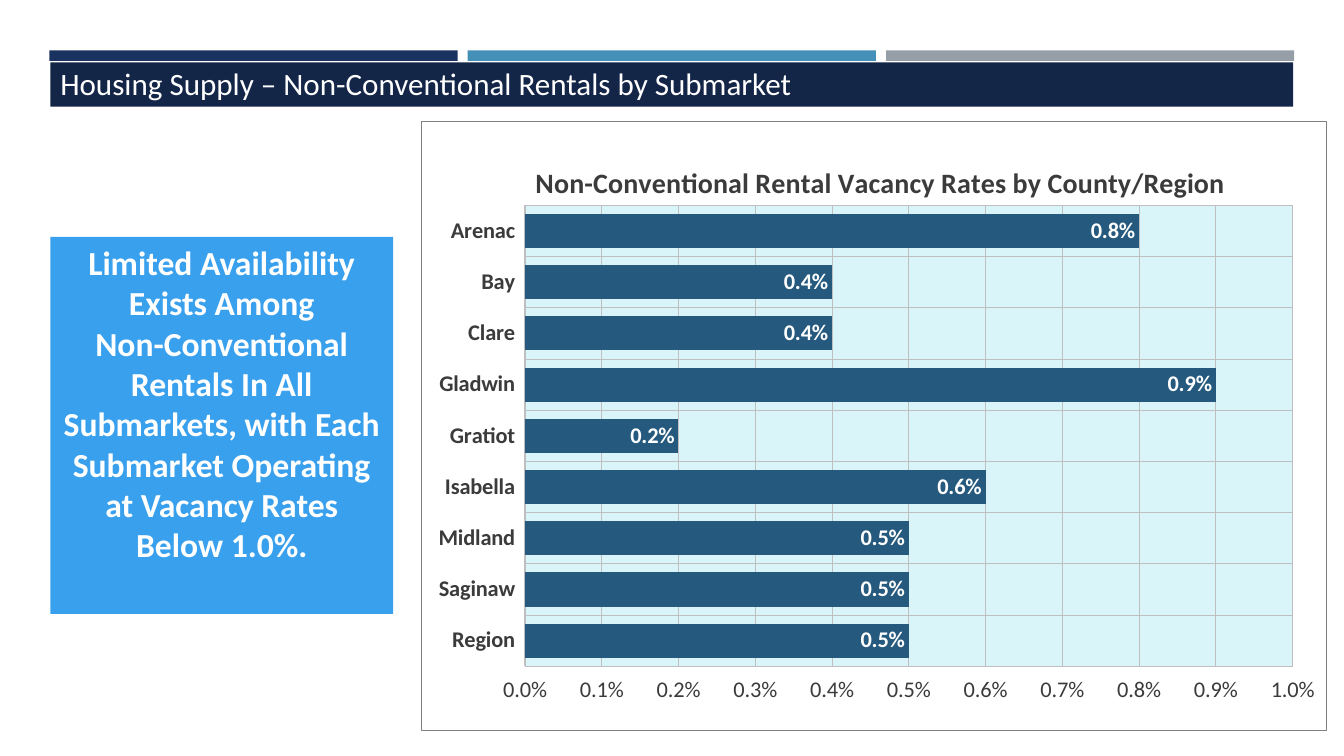
from lxml.etree import fromstring
from pptx import Presentation
from pptx.chart.data import CategoryChartData
from pptx.dml.color import RGBColor
from pptx.enum.chart import XL_CHART_TYPE, XL_LABEL_POSITION, XL_TICK_LABEL_POSITION, XL_TICK_MARK
from pptx.enum.shapes import MSO_SHAPE
from pptx.enum.text import MSO_ANCHOR, PP_ALIGN
from pptx.oxml.ns import nsdecls
from pptx.util import Pt

# Content
HEADING = "Housing Supply – Non-Conventional Rentals by Submarket"
TAKEAWAY = [
    "Limited Availability Exists Among",
    "Non-Conventional Rentals In All Submarkets, with Each Submarket "
    "Operating at Vacancy Rates Below 1.0%.",
]
CHART_TITLE = "Non-Conventional Rental Vacancy Rates by County/Region"
VACANCY = {
    "Region": 0.005, "Saginaw": 0.005, "Midland": 0.005,
    "Isabella": 0.006, "Gratiot": 0.002, "Gladwin": 0.009,
    "Clare": 0.004, "Bay": 0.004, "Arenac": 0.008,
}
STRIPES = ["1A3260", "4590B8", "969FA7"]

# Formats
INK, WHITE, GRID = "3B3B3B", "FFFFFF", "BFBFBF"
HEADING_FONT = {"name": "Calibri", "size": Pt(22.2), "bold": False, "color": WHITE}
TAKEAWAY_FONT = {"name": "Calibri", "size": Pt(24), "bold": True, "color": WHITE}
TITLE_FONT = {"name": "Calibri", "size": Pt(20), "bold": True, "color": INK}
AXIS_FONT = {"name": "Calibri", "size": Pt(16), "bold": False, "color": INK}
CATEGORY_FONT = {**AXIS_FONT, "bold": True}
LABEL_FONT = {**CATEGORY_FONT, "color": WHITE}
AXIS_FORMAT = {"has_major_gridlines": True, "major_tick_mark": XL_TICK_MARK.OUTSIDE,
               "minor_tick_mark": XL_TICK_MARK.NONE}
RATE_SCALE = {"minimum_scale": 0, "maximum_scale": 0.01, "major_unit": 0.001}
LABEL_FORMAT = {"show_value": True, "number_format": "0.0%",
                "number_format_is_linked": False,
                "position": XL_LABEL_POSITION.INSIDE_END}


def color(hex_code):
    return RGBColor.from_string(hex_code)


def apply(target, formats):
    for name, value in formats.items():
        if name == "color":
            target.color.rgb = color(value)
        else:
            setattr(target, name, value)


def panel(left, top, width, height, fill):
    rect = slide.shapes.add_shape(MSO_SHAPE.RECTANGLE, Pt(left), Pt(top), Pt(width), Pt(height))
    rect.shadow.inherit = False
    rect.fill.solid()
    rect.fill.fore_color.rgb = color(fill)
    rect.line.fill.background()
    return rect


def write(rect, lines, font, align, anchor, spacing):
    frame = rect.text_frame
    apply(frame, {"word_wrap": True, "vertical_anchor": anchor})
    for index, line in enumerate(lines):
        paragraph = frame.add_paragraph() if index else frame.paragraphs[0]
        apply(paragraph, {"text": line, "alignment": align, "line_spacing": spacing})
        apply(paragraph.font, font)


def layout(x, y, size=""):
    return fromstring(
        f'<c:layout {nsdecls("c")}><c:manualLayout>{size and "<c:layoutTarget val=" + chr(34) + "inner" + chr(34) + "/>"}'
        f'<c:xMode val="edge"/><c:yMode val="edge"/><c:x val="{x}"/><c:y val="{y}"/>{size}'
        '</c:manualLayout></c:layout>')


def area_format(fill, line):
    return fromstring(
        f'<c:spPr {nsdecls("c", "a")}><a:solidFill><a:srgbClr val="{fill}"/></a:solidFill>'
        f'<a:ln w="9525">{line}</a:ln></c:spPr>')


def place(parent, new_layout, index):
    for old in parent.findall(new_layout.tag):
        parent.remove(old)
    parent.insert(index, new_layout)


deck = Presentation()
apply(deck, {"slide_width": Pt(960), "slide_height": Pt(540)})
slide = deck.slides.add_slide(deck.slide_layouts[6])

# Stripes, heading and takeaway
for index, fill in enumerate(STRIPES):
    panel(35.3 + index * 298.8, 36, 291.6, 7.5, fill)
write(panel(36, 44.6, 887.8, 31.7, "142648"), [HEADING], HEADING_FONT,
      PP_ALIGN.LEFT, MSO_ANCHOR.BOTTOM, 0.9)
write(panel(36, 169.2, 244.8, 269.3, "39A0ED"), TAKEAWAY, TAKEAWAY_FONT,
      PP_ALIGN.CENTER, MSO_ANCHOR.TOP, 1.0)

# Vacancy chart
vacancy_data = CategoryChartData(number_format="0.0%")
vacancy_data.categories = list(VACANCY)
vacancy_data.add_series("Series 1", list(VACANCY.values()))
chart = slide.shapes.add_chart(XL_CHART_TYPE.BAR_CLUSTERED, Pt(301), Pt(86.4),
                               Pt(646.6), Pt(435.6), vacancy_data).chart
apply(chart, {"has_legend": False, "has_title": True})
apply(chart.font, AXIS_FONT)
title = chart.chart_title.text_frame
title.text = CHART_TITLE
apply(title.paragraphs[0].runs[0].font, TITLE_FONT)

# Bars and labels
bars = chart.plots[0]
apply(bars, {"gap_width": 50, "vary_by_categories": False, "has_data_labels": True})
rates = bars.series[0]
rates.format.fill.solid()
rates.format.fill.fore_color.rgb = color("25597D")
apply(bars.data_labels, LABEL_FORMAT)
apply(bars.data_labels.font, LABEL_FONT)

# Axes
for axis, font in ((chart.category_axis, CATEGORY_FONT), (chart.value_axis, AXIS_FONT)):
    apply(axis, AXIS_FORMAT)
    apply(axis.tick_labels.font, font)
    axis.format.line.fill.background()
    apply(axis.major_gridlines.format.line, {"color": GRID, "width": Pt(0.75)})
chart.category_axis.tick_label_position = XL_TICK_LABEL_POSITION.LOW
apply(chart.value_axis, RATE_SCALE)
apply(chart.value_axis.tick_labels,
      {"number_format": "0.0%", "number_format_is_linked": False})

# Plot position, backgrounds and border
chart_root = chart.element
chart_body = chart_root.chart
plot_area = chart_body.plotArea
place(chart.chart_title.element, layout(0.12, 0.06), 1)
place(plot_area, layout(0.114, 0.138, '<c:w val="0.849"/><c:h val="0.757"/>'), 0)
plot_area.append(area_format("DAF5FA", "<a:noFill/>"))
chart_body.addnext(area_format(
    WHITE, '<a:solidFill><a:srgbClr val="808080"/></a:solidFill>'))

deck.save("out.pptx")
